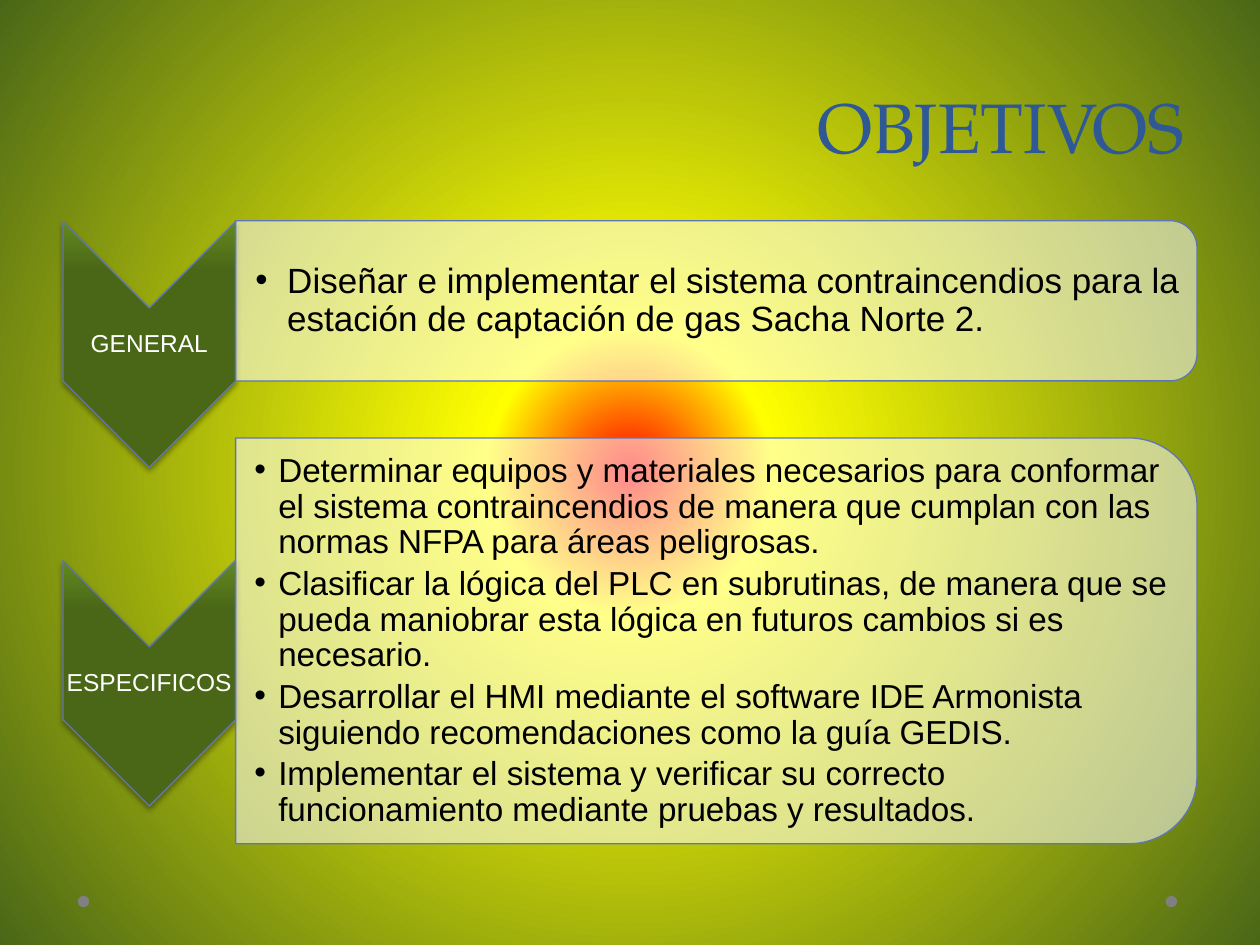
from lxml.etree import SubElement
from pptx import Presentation
from pptx.dml.color import RGBColor
from pptx.enum.shapes import MSO_SHAPE
from pptx.enum.text import MSO_ANCHOR, PP_ALIGN
from pptx.oxml import parse_xml
from pptx.oxml.ns import nsdecls, qn
from pptx.util import Cm, Pt

COLORS = {
    "title": "2F5897", "border": "6076B4", "dot": "808080",
    "panel": "FFFFFF", "label": "FFFFFF", "body": "000000", "shadow": "000000",
    "core": "FF0000", "halo": "FFFF00", "green": "4A6717", "light_green": "63891F",
}
CHEVRON_LEFT, CHEVRON_WIDTH, CHEVRON_HEIGHT = 1.27, 3.48, 4.95
PANEL_LEFT, PANEL_WIDTH = CHEVRON_LEFT + CHEVRON_WIDTH, 19.38
LABEL_INSET = 0.03

OBJECTIVES = [
    dict(label="GENERAL", chevron_top=4.47, panel_top=4.45, panel_height=3.23,
         size=20, indent=0.64, inset=0.4,
         goals=["Diseñar e implementar el sistema contraincendios para la "
                "estación de captación de gas Sacha Norte 2."]),
    dict(label="ESPECIFICOS", chevron_top=11.3, panel_top=8.83, panel_height=8.18,
         size=19, indent=0.48, inset=0.38,
         goals=["Determinar equipos y materiales necesarios para conformar el sistema "
                "contraincendios de manera que cumplan con las normas NFPA para áreas "
                "peligrosas.",
                "Clasificar la lógica del PLC en subrutinas, de manera que se pueda "
                "maniobrar esta lógica en futuros cambios si es necesario.",
                "Desarrollar el HMI mediante el software IDE Armonista siguiendo "
                "recomendaciones como la guía GEDIS.",
                "Implementar el sistema y verificar su correcto funcionamiento "
                "mediante pruebas y resultados."]),
]


def rgb(name):
    return RGBColor.from_string(COLORS[name])


def set_gradient(properties, stops, direction):
    """Replace the solid fill by a gradient of (percent, colour name) stops."""
    stop_xml = "".join(
        f'<a:gs pos="{percent * 1000}"><a:srgbClr val="{COLORS[name]}"/></a:gs>'
        for percent, name in stops)
    gradient = parse_xml(
        f'<a:gradFill {nsdecls("a")} rotWithShape="0">'
        f'<a:gsLst>{stop_xml}</a:gsLst>{direction}</a:gradFill>')
    properties.replace(properties.find(qn("a:solidFill")), gradient)


def paint_background(slide):
    slide.background.fill.solid()
    set_gradient(
        slide.element.find(".//" + qn("p:bgPr")),
        [(0, "core"), (18, "halo"), (100, "green")],
        '<a:path path="circle">'
        '<a:fillToRect l="50000" t="50000" r="50000" b="50000"/></a:path>')


def add_filled(slide, preset, left, top, width, height, fill, border=None, rotation=0):
    """Add a preset shape; the box is the one seen after a quarter turn, if any."""
    if rotation:
        left, top = left + (width - height) / 2, top + (height - width) / 2
        width, height = height, width
    shape = slide.shapes.add_shape(preset, Cm(left), Cm(top), Cm(width), Cm(height))
    shape.rotation = rotation
    shape.shadow.inherit = False
    shape.fill.solid()
    shape.fill.fore_color.rgb = rgb(fill)
    if border:
        shape.line.color.rgb = rgb(border)
        shape.line.width = Pt(0.75)
    else:
        shape.line.fill.background()
    return shape


def add_text(slide, paragraphs, left, top, width, height, size, color, font="Arial",
             anchor=MSO_ANCHOR.MIDDLE, align=PP_ALIGN.LEFT, spacing=0.9, after=0,
             insets=(LABEL_INSET,) * 4):
    box = slide.shapes.add_textbox(Cm(left), Cm(top), Cm(width), Cm(height))
    frame = box.text_frame
    frame.text = "\n".join(paragraphs)
    frame.word_wrap = True
    frame.vertical_anchor = anchor
    (frame.margin_left, frame.margin_top,
     frame.margin_right, frame.margin_bottom) = map(Cm, insets)
    for paragraph in frame.paragraphs:
        paragraph.alignment = align
        paragraph.line_spacing = spacing
        paragraph.space_after = Pt(after)
        for run in paragraph.runs:
            run.font.name = font
            run.font.size = Pt(size)
            run.font.color.rgb = rgb(color)
    return frame


def add_bullets(frame, indent):
    for paragraph in frame.paragraphs:
        properties = paragraph._p.get_or_add_pPr()
        properties.set("marL", str(Cm(indent)))
        properties.set("indent", str(-Cm(indent)))
        SubElement(properties, qn("a:buFont"), typeface="Arial")
        SubElement(properties, qn("a:buChar"), char="•")


def add_chevron(slide, label, top):
    chevron = add_filled(slide, MSO_SHAPE.CHEVRON, CHEVRON_LEFT, top,
                         CHEVRON_WIDTH, CHEVRON_HEIGHT, "green", "border", 90)
    properties = chevron._element.spPr
    set_gradient(properties, [(0, "green"), (80, "green"), (100, "light_green")],
                 '<a:lin ang="16200000" scaled="0"/>')
    properties.find(qn("a:effectLst")).append(parse_xml(
        f'<a:outerShdw {nsdecls("a")} blurRad="{Pt(3.1)}" dist="{Pt(1.8)}" '
        f'dir="5400000" rotWithShape="0"><a:srgbClr val="{COLORS["shadow"]}">'
        '<a:alpha val="35000"/></a:srgbClr></a:outerShdw>'))
    add_text(slide, [label], CHEVRON_LEFT, top + CHEVRON_WIDTH / 2, CHEVRON_WIDTH,
             CHEVRON_HEIGHT - CHEVRON_WIDTH, 14, "label",
             align=PP_ALIGN.CENTER, after=5)


def add_panel(slide, goals, top, height, size, indent, inset):
    panel = add_filled(slide, MSO_SHAPE.ROUND_2_SAME_RECTANGLE, PANEL_LEFT, top,
                       PANEL_WIDTH, height, "panel", "border", 90)
    color = panel._element.spPr.find(qn("a:solidFill"))[0]
    SubElement(color, qn("a:alpha"), val="54000")
    corner = 0.05 * height
    frame = add_text(slide, goals, PANEL_LEFT, top + corner, PANEL_WIDTH - corner,
                     height - 2 * corner, size, "body", after=3,
                     insets=(inset,) + (LABEL_INSET,) * 3)
    add_bullets(frame, indent)


def main():
    presentation = Presentation()
    presentation.slide_width, presentation.slide_height = Cm(25.4), Cm(19.05)
    slide = presentation.slides.add_slide(presentation.slide_layouts[6])
    paint_background(slide)
    for dot_left in (23.5, 1.57):
        add_filled(slide, MSO_SHAPE.OVAL, dot_left, 18.06, 0.23, 0.23, "dot")
    add_text(slide, ["OBJETIVOS"], 1.27, 1.63, 22.86, 1.88, 40, "title",
             font="TeX Gyre Pagella", anchor=MSO_ANCHOR.BOTTOM, align=PP_ALIGN.RIGHT,
             spacing=Pt(58), insets=(0.25, 0.13, 0.25, 0.13))
    for objective in OBJECTIVES:
        add_chevron(slide, objective["label"], objective["chevron_top"])
        add_panel(slide, objective["goals"], objective["panel_top"],
                  objective["panel_height"], objective["size"],
                  objective["indent"], objective["inset"])
    presentation.save("out.pptx")


if __name__ == "__main__":
    main()
